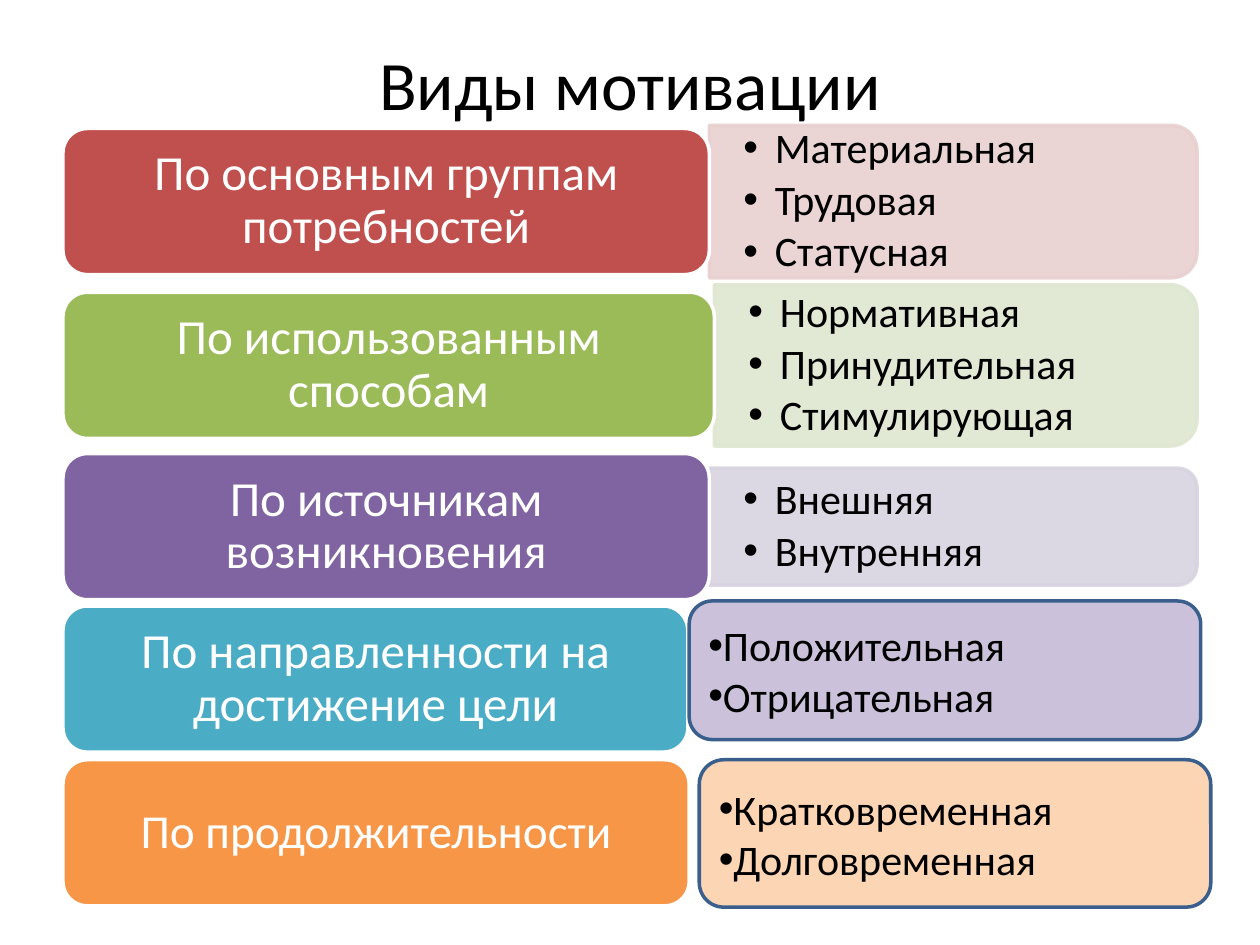
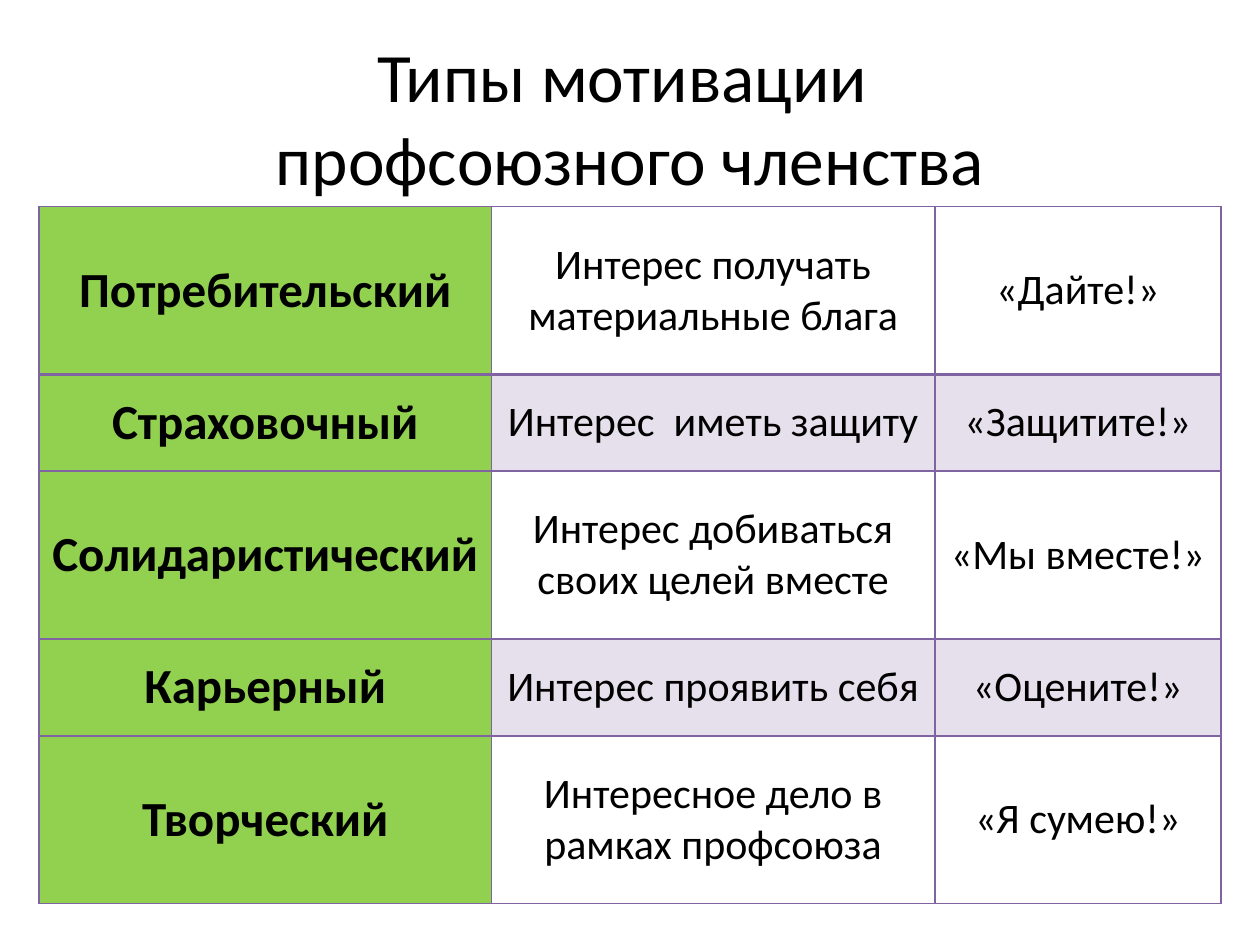
from pptx import Presentation
from pptx import util as u
from pptx.dml.color import RGBColor
from pptx.enum import shapes, text
from pptx.oxml.ns import qn
from lxml import etree

COLORS = {
    "ink": "000000", "white": "FFFFFF", "outline": "3A5F8C",
    "red": "C0504D", "pale_red": "E8D0D0",
    "green": "9BBB59", "pale_green": "DEE7D1",
    "purple": "8064A2", "pale_purple": "D8D3E0",
    "blue": "4BACC6", "orange": "F79646",
    "lilac": "CCC1DA", "peach": "FCD5B5", "lime": "92D050",
}
FONT = "Calibri"
LABEL_LEFT, LABEL_HEIGHT, TAB_RIGHT = 0.5, 1.16, 9.5

# label, colour, top, width, text size
TABBED_ROWS = [
    (("По основным группам потребностей", "red", 1.02, 5.13, 28),
     "pale_red", 1.21, ["Материальная", "Трудовая", "Статусная"]),
    (("По использованным способам", "green", 2.32, 5.17, 28),
     "pale_green", 1.28, ["Нормативная", "Принудительная", "Стимулирующая"]),
    (("По источникам возникновения", "purple", 3.6, 5.13, 28),
     "pale_purple", 0.93, ["Внешняя", "Внутренняя"]),
]
BOXED_ROWS = [
    (("По направленности на достижение цели", "blue", 4.81, 4.96, 28),
     "lilac", (5.47, 4.77, 4.06, 1.1), ["Положительная", "Отрицательная"]),
    (("По продолжительности", "orange", 6.03, 4.97, 27),
     "peach", (5.55, 6.03, 4.06, 1.17), ["Кратковременная", "Долговременная"]),
]
MEMBERSHIP_TYPES = [
    ("Потребительский", "Интерес получать материальные блага", "«Дайте!»"),
    ("Страховочный", "Интерес  иметь защиту", "«Защитите!»"),
    ("Солидаристический", "Интерес добиваться своих целей вместе", "«Мы вместе!»"),
    ("Карьерный", "Интерес проявить себя", "«Оцените!»"),
    ("Творческий", "Интересное дело в рамках профсоюза", "«Я сумею!»"),
]


def rgb(name):
    return RGBColor.from_string(COLORS[name])


def assign(target, **values):
    for name, value in values.items():
        setattr(target, name, value)


def set_opacity(element, percent):
    """Apply the opacity to every colour already set inside the element."""
    for color in element.iter(qn("a:srgbClr")):
        etree.SubElement(color, qn("a:alpha"), val=str(percent * 1000))


class SlideBuilder:
    def __init__(self):
        self.deck = Presentation()
        assign(self.deck, slide_width=u.Inches(10), slide_height=u.Inches(7.5))
        self.page = None

    def add_page(self, title):
        self.page = self.deck.slides.add_slide(self.deck.slide_layouts[6])
        height = 1.25 if "\v" in title else 0.72
        frame = self.text_box(0.5, 0.3, 9, height)
        self.fill_text(frame, [title], 39.6, align=text.PP_ALIGN.CENTER)

    def text_box(self, left, top, width, height):
        box = self.page.shapes.add_textbox(*map(u.Inches, (left, top, width, height)))
        return box.text_frame

    def fill_text(self, frame, lines, size, color="ink", align=text.PP_ALIGN.LEFT,
                  margins=(0.1, 0.05), bullet_indent=None, bold=False, **spacing):
        """Fill a frame, one paragraph a line; bullet_indent None means no bullets."""
        side, end = map(u.Inches, margins)
        assign(frame, word_wrap=True, vertical_anchor=text.MSO_ANCHOR.MIDDLE,
               margin_left=side, margin_right=side, margin_top=end, margin_bottom=end)
        for number, line in enumerate(lines):
            para = frame.add_paragraph() if number else frame.paragraphs[0]
            para.text = line
            if bullet_indent is not None:
                self.add_bullet(para, bullet_indent)
            assign(para, alignment=align, **spacing)
            for span in para.runs:
                assign(span.font, name=FONT, size=u.Pt(size), bold=bold)
                span.font.color.rgb = rgb(color)

    def add_bullet(self, para, indent):
        props = para._p.get_or_add_pPr()
        props.set("marL", str(u.Inches(indent)))
        props.set("indent", str(-u.Inches(indent)))
        etree.SubElement(props, qn("a:buFont"), typeface="Arial")
        etree.SubElement(props, qn("a:buChar"), char="•")

    def shape(self, kind, place, fill, line):
        shape = self.page.shapes.add_shape(kind, *map(u.Inches, place))
        shape.shadow.inherit = False
        shape.fill.solid()
        shape.fill.fore_color.rgb = rgb(fill)
        shape.line.color.rgb = rgb(line)
        shape.line.width = u.Pt(2)
        return shape

    def label(self, wording, color, top, width, size):
        box = self.shape(shapes.MSO_SHAPE.ROUNDED_RECTANGLE,
                         (LABEL_LEFT, top, width, LABEL_HEIGHT), color, "white")
        self.fill_text(box.text_frame, [wording], size, "white", text.PP_ALIGN.CENTER,
                       margins=(0.12, 0.06), line_spacing=0.9)

    def tab(self, left, middle, height, color, items):
        """Panel rounded on its right side, centred on the height of its label."""
        width = TAB_RIGHT - left
        center = left + width / 2
        panel = self.shape(shapes.MSO_SHAPE.ROUND_2_SAME_RECTANGLE,
                           (center - height / 2, middle - width / 2, height, width),
                           color, color)
        panel.rotation = 90
        set_opacity(panel.element, 90)
        frame = self.text_box(left, middle - height / 2, width, height)
        self.fill_text(frame, items, 24, margins=(0.27, 0), bullet_indent=0.25,
                       line_spacing=0.9, space_after=u.Pt(3.6))

    def bullet_box(self, place, color, items):
        box = self.shape(shapes.MSO_SHAPE.ROUNDED_RECTANGLE, place, color, "outline")
        self.fill_text(box.text_frame, items, 24, bullet_indent=0)

    def table(self, left, top, widths, heights, rows):
        frame = self.page.shapes.add_table(
            len(rows), len(widths),
            *map(u.Inches, (left, top, sum(widths), sum(heights))))
        table = frame.table
        assign(table, first_row=False, horz_banding=False)
        for column, width in zip(table.columns, widths):
            column.width = u.Inches(width)
        for number, (row, height, wordings) in enumerate(zip(table.rows, heights, rows)):
            row.height = u.Inches(height)
            for position, (cell, wording) in enumerate(zip(row.cells, wordings)):
                heading = position == 0
                self.fill_cell(cell, heading, banded=number % 2 == 1)
                self.fill_text(cell.text_frame, [wording], 28 if heading else 24,
                               align=text.PP_ALIGN.CENTER, bold=heading)
                assign(cell, vertical_anchor=text.MSO_ANCHOR.MIDDLE,
                       margin_left=u.Inches(0.08), margin_right=u.Inches(0.08))
                self.border_cell(cell, top=2 if number == 1 else 1,
                                 bottom=2 if number == 0 else 1)

    def fill_cell(self, cell, heading, banded):
        if not (heading or banded):
            cell.fill.background()
            return
        cell.fill.solid()
        cell.fill.fore_color.rgb = rgb("lime" if heading else "purple")
        if not heading:
            set_opacity(cell._tc, 20)

    def border_cell(self, cell, top, bottom):
        props = cell._tc.get_or_add_tcPr()
        edges = {"lnL": 1, "lnR": 1, "lnT": top, "lnB": bottom}
        for order, (edge, width) in enumerate(edges.items()):
            line = etree.Element(qn(f"a:{edge}"), w=str(u.Pt(width)))
            fill = etree.SubElement(line, qn("a:solidFill"))
            etree.SubElement(fill, qn("a:srgbClr"), val=COLORS["purple"])
            props.insert(order, line)


def main():
    builder = SlideBuilder()

    builder.add_page("Виды мотивации")
    for label, color, height, items in TABBED_ROWS:
        _, _, top, width, _ = label
        builder.tab(LABEL_LEFT + width, top + LABEL_HEIGHT / 2, height, color, items)
        builder.label(*label)
    for label, color, place, items in BOXED_ROWS:
        builder.label(*label)
        builder.bullet_box(place, color, items)

    builder.add_page("Типы мотивации \vпрофсоюзного членства")
    builder.table(0.31, 1.64, (3.59, 3.52, 2.27), (1.33, 0.77, 1.33, 0.77, 1.33),
                  MEMBERSHIP_TYPES)

    builder.deck.save("out.pptx")


if __name__ == "__main__":
    main()
